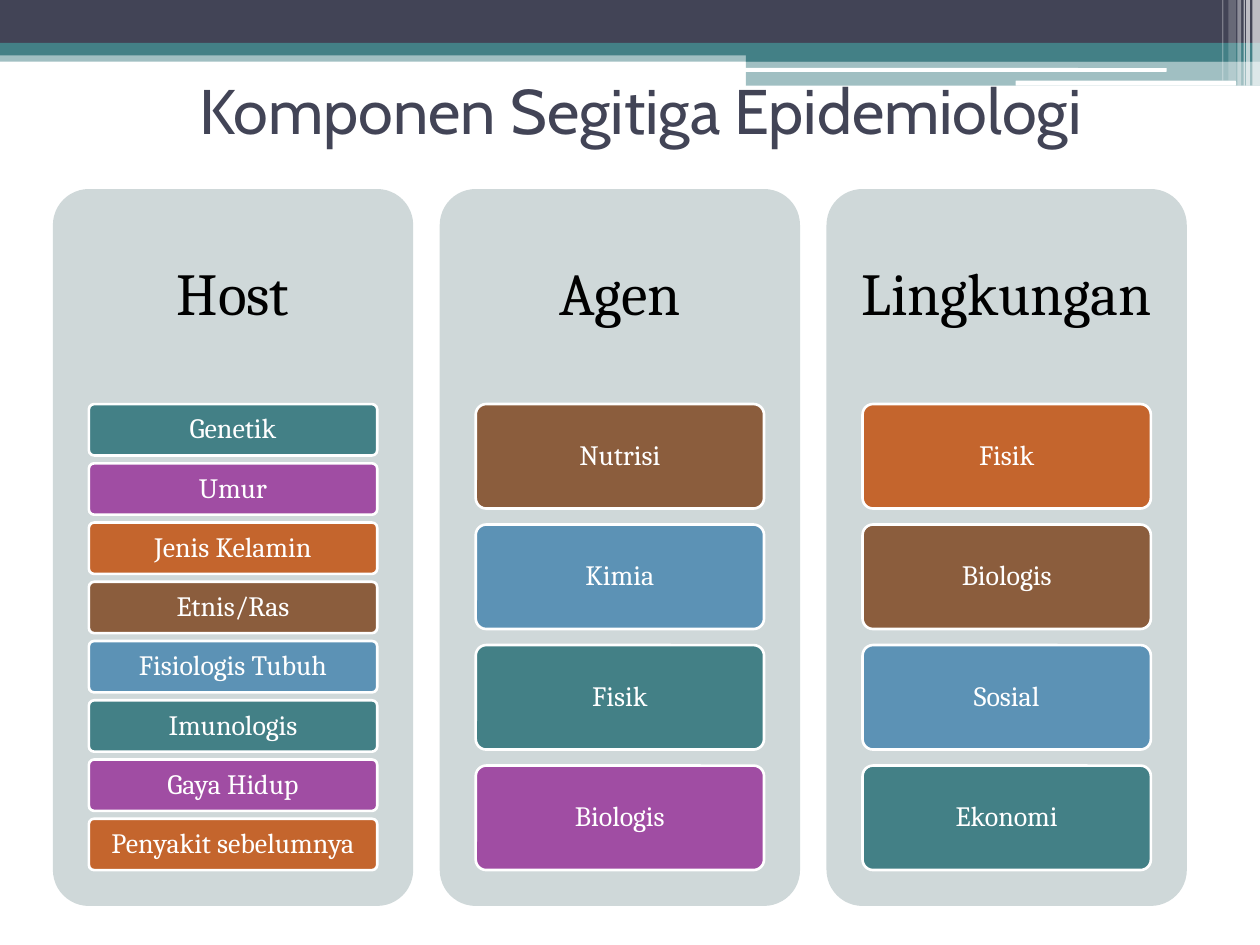
from itertools import cycle

from lxml import etree
from pptx import Presentation
from pptx.dml.color import RGBColor
from pptx.enum.shapes import MSO_SHAPE
from pptx.enum.text import MSO_ANCHOR, PP_ALIGN
from pptx.oxml.ns import qn
from pptx.util import Inches, Pt

RECT, ROUNDED = MSO_SHAPE.RECTANGLE, MSO_SHAPE.ROUNDED_RECTANGLE
CENTER, MIDDLE = PP_ALIGN.CENTER, MSO_ANCHOR.MIDDLE

WHITE = RGBColor(0xFF, 0xFF, 0xFF)
BLACK = RGBColor(0x00, 0x00, 0x00)
NAVY = RGBColor(0x42, 0x44, 0x56)
TEAL = RGBColor(0x43, 0x80, 0x86)
PURPLE = RGBColor(0xA0, 0x4D, 0xA3)
ORANGE = RGBColor(0xC4, 0x65, 0x2D)
BROWN = RGBColor(0x8B, 0x5D, 0x3D)
BLUE = RGBColor(0x5C, 0x92, 0xB5)
PALE = RGBColor(0xCF, 0xD8, 0xD9)

# The slide is a grid of 100 columns by 75 rows.
COLUMNS, ROWS = 100, 75
PANEL_LEFT, PANEL_TOP, PANEL_WIDTH, PANEL_HEIGHT = 4.2, 15, 28.6, 56.9
PANEL_PITCH = 30.7
HEADING_SHARE, ITEMS_SHARE, SIDE_SHARE = 0.3, 0.65, 0.1
GAP_TO_ITEM = 2 / 13

COMPONENTS = {
    "Host": ["Genetik", "Umur", "Jenis Kelamin", "Etnis/Ras", "Fisiologis Tubuh",
             "Imunologis", "Gaya Hidup", "Penyakit sebelumnya"],
    "Agen": ["Nutrisi", "Kimia", "Fisik", "Biologis"],
    "Lingkungan": ["Fisik", "Biologis", "Sosial", "Ekonomi"],
}

# left, top, width, height, colour, opacity in percent
BANDS = [
    (0, 4, 100, 0.9, TEAL, 50),
    (0, 0, 100, 3.4, NAVY, 100),
    (0, 3.4, 100, 1, TEAL, 100),
    (59.2, 3.9, 40.8, 1, TEAL, 100),
    (59.2, 4.8, 40.8, 2, TEAL, 50),
]
RULES = [(59.1, 5.4, 33.5, 0.3), (80.6, 6.4, 17.5, 0.4)]
# left, width, height, opacity in percent
STRIPES = [
    (99.4, 0.6, 6.8, 65), (98.9, 0.3, 6.8, 65), (98.7, 0.1, 6.8, 60),
    (98.2, 0.3, 6.8, 40), (97.5, 0.6, 6.4, 20), (97, 0.1, 6.4, 30),
]


class SlideBuilder:
    heading_font, body_font = "Cabin", "Cambria"

    def __init__(self, deck):
        self.slide = deck.slides.add_slide(deck.slide_layouts[5])
        self.column = deck.slide_width / COLUMNS
        self.row = deck.slide_height / ROWS

    def place(self, left, top, width, height):
        """Turn grid units into slide lengths."""
        return (round(left * self.column), round(top * self.row),
                round(width * self.column), round(height * self.row))

    def set_label(self, frame, text, font, size, color, line_spacing=1.0):
        frame.text = text
        frame.word_wrap = True
        frame.vertical_anchor = MIDDLE
        paragraph = frame.paragraphs[0]
        paragraph.alignment = CENTER
        paragraph.line_spacing = line_spacing
        style = paragraph.runs[0].font
        style.name, style.size = font, Pt(size)
        style.color.rgb = color

    def set_margins(self, frame, horizontal, vertical):
        frame.margin_left = frame.margin_right = Inches(horizontal)
        frame.margin_top = frame.margin_bottom = Inches(vertical)

    def title(self, text, *box):
        title = self.slide.shapes.title
        title.left, title.top, title.width, title.height = self.place(*box)
        self.set_label(title.text_frame, text, self.heading_font, 36, NAVY)
        # Bring the title in front of the header bands.
        title._element.getparent().append(title._element)

    def block(self, box, color, corner=None, opacity=100):
        """Add a borderless rectangle, rounded when a corner share is given."""
        kind = RECT if corner is None else ROUNDED
        shape = self.slide.shapes.add_shape(kind, *self.place(*box))
        shape.shadow.inherit = False
        shape.line.fill.background()
        shape.fill.solid()
        shape.fill.fore_color.rgb = color
        if corner is not None:
            shape.adjustments[0] = corner
        if opacity < 100:
            fill_color = shape._element.spPr.find(qn("a:solidFill"))[0]
            etree.SubElement(fill_color, qn("a:alpha"), val=str(opacity * 1000))
        return shape

    def heading(self, text, *box):
        frame = self.slide.shapes.add_textbox(*self.place(*box)).text_frame
        self.set_margins(frame, 0.14, 0.14)
        self.set_label(frame, text, self.body_font, 34, BLACK, 0.9)

    def item(self, text, color, *box):
        shape = self.block(box, color, corner=0.1)
        shape.line.color.rgb = WHITE
        shape.line.width = Pt(1.5)
        self.set_margins(shape.text_frame, 0.04, 0.03)
        self.set_label(shape.text_frame, text, self.body_font, 16, WHITE, 0.9)

    def panel(self, left, name, items, colors):
        self.block((left, PANEL_TOP, PANEL_WIDTH, PANEL_HEIGHT), PALE, corner=0.1)
        heading_height = PANEL_HEIGHT * HEADING_SHARE
        self.heading(name, left, PANEL_TOP, PANEL_WIDTH, heading_height)

        side = PANEL_WIDTH * SIDE_SHARE
        gaps = (len(items) - 1) * GAP_TO_ITEM
        height = PANEL_HEIGHT * ITEMS_SHARE / (len(items) + gaps)
        for index, text in enumerate(items):
            top = PANEL_TOP + heading_height + index * height * (1 + GAP_TO_ITEM)
            self.item(text, next(colors), left + side, top,
                      PANEL_WIDTH - 2 * side, height)


def main():
    deck = Presentation()
    deck.slide_width, deck.slide_height = Inches(10), Inches(7.5)
    builder = SlideBuilder(deck)

    for *box, color, opacity in BANDS:
        builder.block(box, color, opacity=opacity)
    for box in RULES:
        builder.block(box, WHITE, corner=0.17)
    for left, width, height, opacity in STRIPES:
        builder.block((left, 0, width, height), WHITE, opacity=opacity)
    builder.title("Komponen Segitiga Epidemiologi", 4.2, 5.8, 93.3, 5.8)

    # Item colours run on from one panel to the next.
    colors = cycle([TEAL, PURPLE, ORANGE, BROWN, BLUE])
    for index, (name, items) in enumerate(COMPONENTS.items()):
        builder.panel(PANEL_LEFT + index * PANEL_PITCH, name, items, colors)

    deck.save("out.pptx")


if __name__ == "__main__":
    main()
